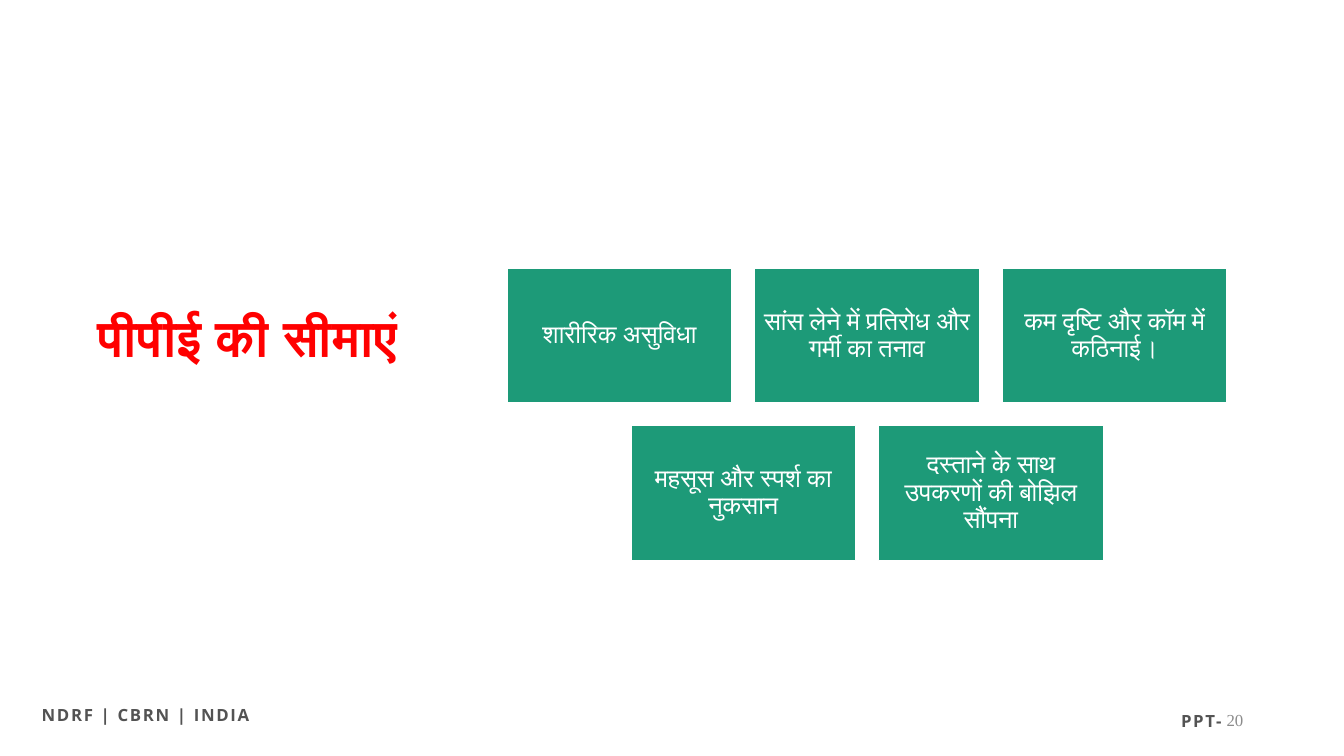
import pptx
import pptx.dml.color
import pptx.enum.shapes
import pptx.enum.text
import pptx.util

Inches = pptx.util.Inches
Pt = pptx.util.Pt
ALIGN = pptx.enum.text.PP_ALIGN
ANCHOR = pptx.enum.text.MSO_ANCHOR

COLORS = {
    "white": "FFFFFF",
    "green": "1D9A78",
    "red": "FF0000",
    "footer": "535353",
    "number": "8C8C8C",
}
TITLE = "पीपीई की सीमाएं"
LIMITATION_ROWS = [
    ["शारीरिक असुविधा", "सांस लेने में प्रतिरोध और गर्मी का तनाव", "कम दृष्टि और कॉम में कठिनाई।"],
    ["महसूस और स्पर्श का नुकसान", "दस्ताने के साथ उपकरणों की बोझिल सौंपना"],
]
FOOTERS = [
    ("NDRF | CBRN | INDIA", (0.28, 6.9, 2.33, 0.38)),
    ("PPT-", (11.58, 6.96, 0.67, 0.38)),
]
PAGE_NUMBER = "20"

CARD_WIDTH, CARD_HEIGHT = 2.23, 1.34
COLUMN_STEP, ROW_STEP = 2.455, 1.56
CARDS_CENTER, CARDS_TOP = 8.6, 2.66


def color(name):
    return pptx.dml.color.RGBColor.from_string(COLORS[name])


def write(shape, text, size, font, color_name, bold=False, align=ALIGN.CENTER,
          anchor=ANCHOR.MIDDLE, inset=(0.1, 0.05), line_spacing=1.0, tracking=0, wrap=True):
    """Fill a shape with one formatted paragraph; tracking is in points."""
    frame = shape.text_frame
    frame.word_wrap = wrap
    frame.vertical_anchor = anchor
    frame.margin_left = frame.margin_right = Inches(inset[0])
    frame.margin_top = frame.margin_bottom = Inches(inset[1])
    para = frame.paragraphs[0]
    para.alignment = align
    para.line_spacing = line_spacing
    span = para.add_run()
    span.text = text
    span.font.size = Pt(size)
    span.font.name = font
    span.font.bold = bold
    span.font.color.rgb = color(color_name)
    if tracking:
        span.font._element.set("spc", str(round(tracking * 100)))


def add_text(page, place, *args, **options):
    box = page.shapes.add_textbox(*map(Inches, place))
    write(box, *args, **options)


def add_card(page, left, top, text):
    card = page.shapes.add_shape(
        pptx.enum.shapes.MSO_SHAPE.RECTANGLE,
        Inches(left), Inches(top), Inches(CARD_WIDTH), Inches(CARD_HEIGHT))
    card.shadow.inherit = False
    card.fill.solid()
    card.fill.fore_color.rgb = color("green")
    card.line.color.rgb = color("white")
    card.line.width = Pt(1)
    write(card, text, 18, "Calibri", "white", inset=(0.07, 0.07), line_spacing=0.9)


def main():
    deck = pptx.Presentation()
    deck.slide_width, deck.slide_height = Inches(13.33), Inches(7.5)
    page = deck.slides.add_slide(deck.slide_layouts[6])

    for text, place in FOOTERS:
        add_text(page, place, text, 12, "Open Sans", "footer", bold=True,
                 anchor=ANCHOR.TOP, inset=(0.09, 0.09), tracking=1.2, wrap=False)
    add_text(page, (0.19, 2.99, 4.53, 0.77), TITLE, 36, "Open Sans", "red",
             bold=True, line_spacing=0.9)

    for row, labels in enumerate(LIMITATION_ROWS):
        row_width = (len(labels) - 1) * COLUMN_STEP + CARD_WIDTH
        row_left = CARDS_CENTER - row_width / 2
        for column, label in enumerate(labels):
            add_card(page, row_left + column * COLUMN_STEP, CARDS_TOP + row * ROW_STEP, label)

    add_text(page, (9.43, 6.94, 3, 0.4), PAGE_NUMBER, 12, "Times New Roman", "number",
             align=ALIGN.RIGHT)
    deck.save("out.pptx")


if __name__ == "__main__":
    main()
